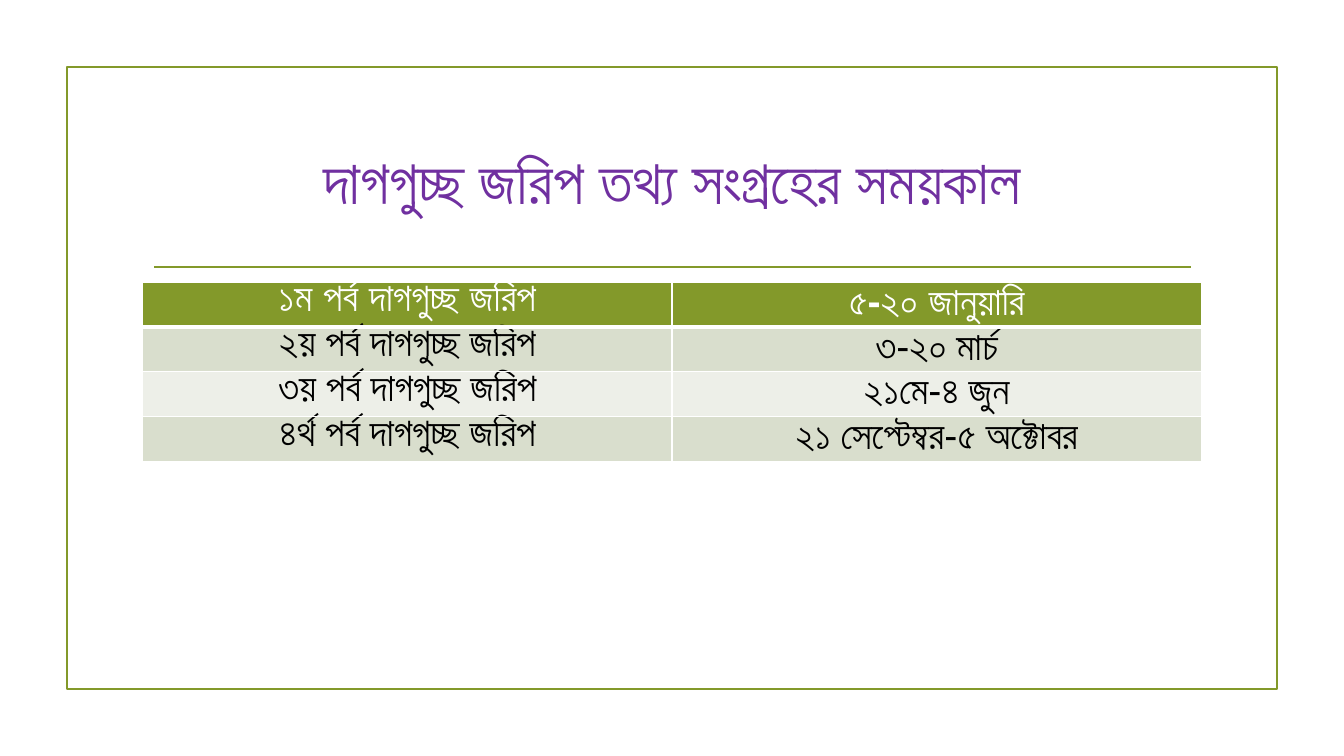
import pptx
import pptx.util
import pptx.dml.color
import pptx.enum.shapes
import pptx.enum.text
import pptx.oxml
import pptx.oxml.ns

TITLE = "দাগগুচ্ছ জরিপ তথ্য সংগ্রহের সময়কাল"
ROWS = [
    ("১ম পর্ব দাগগুচ্ছ জরিপ", "৫-২০ জানুয়ারি"),
    ("২য় পর্ব দাগগুচ্ছ জরিপ", "৩-২০ মার্চ"),
    ("৩য় পর্ব দাগগুচ্ছ জরিপ", "২১মে-৪ জুন"),
    ("৪র্থ পর্ব দাগগুচ্ছ জরিপ", "২১ সেপ্টেম্বর-৫ অক্টোবর"),
]
FILLS = ["83992A", "D9DECD", "EDEFE8", "D9DECD"]
GREEN, PURPLE, WHITE, BLACK = "83992A", "7030A0", "FFFFFF", "000000"
WIDE, HIGH = 13.33, 7.5
BODY = 10.5
LEFT = (WIDE - BODY) / 2
ROW = 0.43

Inch = pptx.util.Inches
Pt = pptx.util.Pt


def color(code):
    return pptx.dml.color.RGBColor.from_string(code)


def write(frame, text, size, tint, bold=False, gap=1.0):
    frame.word_wrap = True
    para = frame.paragraphs[0]
    para.alignment = pptx.enum.text.PP_ALIGN.CENTER
    para.line_spacing = gap
    run = para.add_run()
    run.text = text
    run.font.name = "Arial"
    run.font.size = Pt(size)
    run.font.bold = bold
    run.font.color.rgb = color(tint)


def edge(cell, side, width):
    line = pptx.oxml.parse_xml(
        f'<a:ln{side} {pptx.oxml.ns.nsdecls("a")} w="{Pt(width)}">'
        f'<a:solidFill><a:srgbClr val="{WHITE}"/></a:solidFill></a:ln{side}>'
    )
    cell._tc.get_or_add_tcPr().append(line)


def frame(slide):
    box = slide.shapes.add_shape(
        pptx.enum.shapes.MSO_SHAPE.RECTANGLE,
        Inch((WIDE - 12) / 2), Inch((HIGH - 6.17) / 2), Inch(12), Inch(6.17))
    box.shadow.inherit = False
    box.fill.background()
    rule = slide.shapes.add_connector(
        pptx.enum.shapes.MSO_CONNECTOR.STRAIGHT,
        Inch(1.53), Inch(2.65), Inch(11.81), Inch(2.65))
    rule._element.spPr.append(pptx.oxml.parse_xml(
        f'<a:effectLst {pptx.oxml.ns.nsdecls("a")}/>'))
    for item in (box, rule):
        item.line.color.rgb = color(GREEN)
        item.line.width = Pt(1.25)


def title(slide):
    box = slide.shapes.add_textbox(Inch(LEFT), Inch(1.07), Inch(BODY), Inch(1.43))
    box.text_frame.vertical_anchor = pptx.enum.text.MSO_ANCHOR.MIDDLE
    write(box.text_frame, TITLE, 44, PURPLE)


def table(slide):
    grid = slide.shapes.add_table(
        len(ROWS), 2, Inch(LEFT), Inch(2.8), Inch(BODY), Inch(ROW * len(ROWS))).table
    for r, texts in enumerate(ROWS):
        head = r == 0
        for c, text in enumerate(texts):
            cell = grid.cell(r, c)
            cell.margin_left = cell.margin_right = Inch(0.07)
            cell.margin_top = cell.margin_bottom = 0
            for side in "LRTB":
                thick = (head and side == "B") or (r == 1 and side == "T")
                edge(cell, side, 3 if thick else 1)
            cell.fill.solid()
            cell.fill.fore_color.rgb = color(FILLS[r])
            write(cell.text_frame, text, 28, WHITE if head else BLACK, head, 0.95)


def main():
    deck = pptx.Presentation()
    deck.slide_width, deck.slide_height = Inch(WIDE), Inch(HIGH)
    slide = deck.slides.add_slide(deck.slide_layouts[6])
    frame(slide)
    title(slide)
    table(slide)
    deck.save("out.pptx")


if __name__ == "__main__":
    main()
